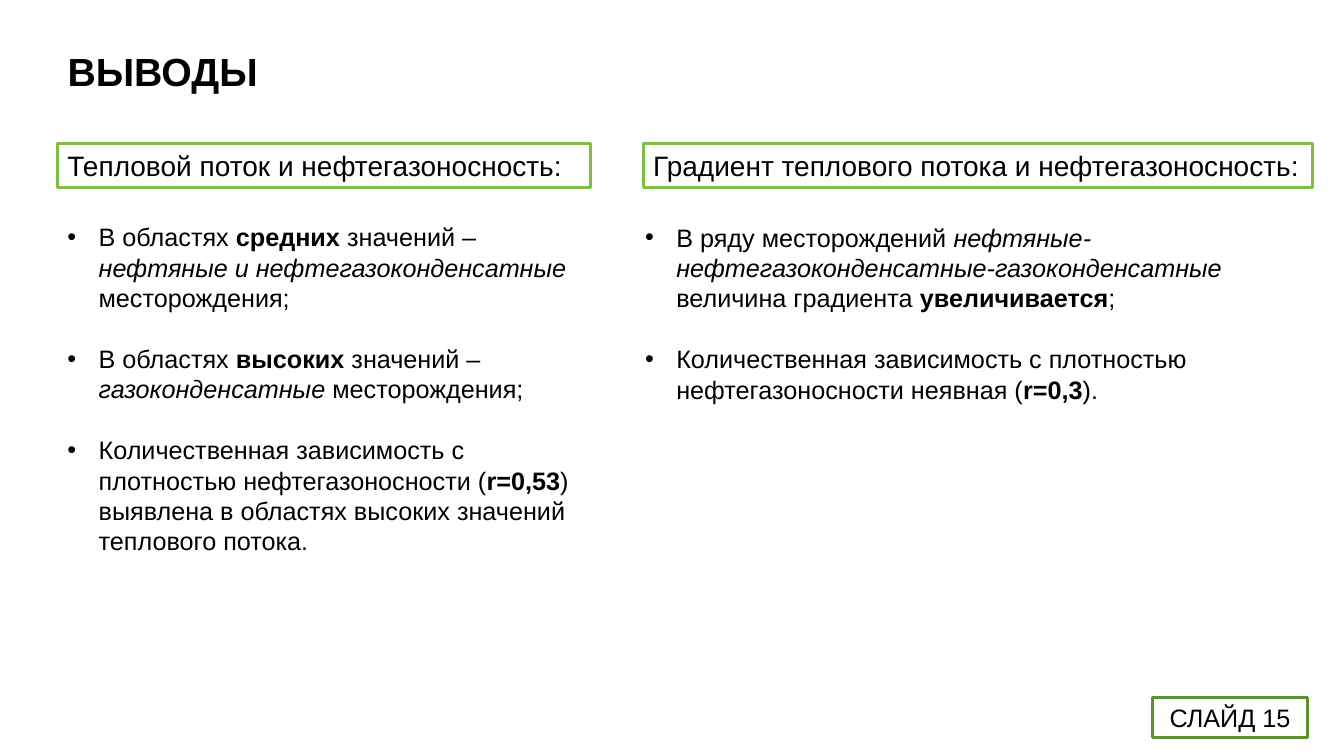
from pptx import Presentation
from pptx.dml.color import RGBColor
from pptx.enum.shapes import MSO_SHAPE
from pptx.enum.text import MSO_ANCHOR, PP_ALIGN
from pptx.oxml.ns import qn
from pptx.util import Inches, Pt
from lxml.etree import SubElement

TITLE = "ВЫВОДЫ"
SLIDE_LABEL = "СЛАЙД 15"
COLUMNS = [
    {
        "heading": "Тепловой поток и нефтегазоносность:",
        "heading_span": (0.57, 5.29),
        "list_span": (0.57, 5.29),
        "points": [
            [("В областях ", ""), ("средних", "b"), (" значений – ", ""),
             ("нефтяные и нефтегазоконденсатные ", "i"), ("месторождения;", "")],
            [("В областях ", ""), ("высоких", "b"), (" значений – ", ""),
             ("газоконденсатные", "i"), (" месторождения;", "")],
            [("Количественная зависимость с плотностью нефтегазоносности (", ""),
             ("r=0,53", "b"),
             (") выявлена в областях высоких значений теплового потока.", "")],
        ],
        "list_height": 3.43,
    },
    {
        "heading": "Градиент теплового потока и нефтегазоносность:",
        "heading_span": (6.38, 6.64),
        "list_span": (6.3, 6.67),
        "points": [
            [("В ряду месторождений ", ""),
             ("нефтяные-нефтегазоконденсатные-газоконденсатные", "i"),
             (" величина градиента ", ""), ("увеличивается", "b"), (";", "")],
            [("Количественная зависимость с плотностью нефтегазоносности неявная (", ""),
             ("r=0,3", "b"), (").", "")],
        ],
        "list_height": 1.92,
    },
]

BLACK = RGBColor(0x00, 0x00, 0x00)
WHITE = RGBColor(0xFF, 0xFF, 0xFF)
GREEN = RGBColor(0x80, 0xBF, 0x44)
DARK_GREEN = RGBColor(0x5F, 0x90, 0x31)
FONT = "Arial"
HEADING_TOP, HEADING_HEIGHT = 1.42, 0.44
LIST_TOP = 2.15
BULLET_INDENT = Inches(0.31)
LIST_PITCH = Pt(21.7)


def write(box, paragraphs, size=18, align=PP_ALIGN.LEFT, anchor=MSO_ANCHOR.TOP,
          bold=False, spacing=None, gap=None, bullet=None):
    frame = box.text_frame
    frame.word_wrap = True
    frame.vertical_anchor = anchor
    for index, spans in enumerate(paragraphs):
        para = frame.add_paragraph() if index else frame.paragraphs[0]
        if bullet:
            properties = para._p.get_or_add_pPr()
            properties.set("marL", str(BULLET_INDENT))
            properties.set("indent", str(-BULLET_INDENT))
            SubElement(properties, qn("a:buFont")).set("typeface", FONT)
            SubElement(properties, qn("a:buChar")).set("char", bullet)
        para.alignment = align
        if spacing:
            para.line_spacing = spacing
        if gap and index:
            para.space_before = gap
        for text, style in spans:
            span = para.add_run()
            span.text = text
            span.font.name = FONT
            span.font.size = Pt(size)
            span.font.color.rgb = BLACK
            span.font.bold = bold or style == "b"
            span.font.italic = style == "i"


def framed_label(page, text, left, top, width, height, line_color, **text_format):
    box = page.shapes.add_shape(MSO_SHAPE.RECTANGLE, Inches(left), Inches(top),
                                Inches(width), Inches(height))
    box.shadow.inherit = False
    box.fill.solid()
    box.fill.fore_color.rgb = WHITE
    box.line.color.rgb = line_color
    box.line.width = Pt(2)
    write(box, [[(text, "")]], **text_format)


def main():
    deck = Presentation()
    deck.slide_width, deck.slide_height = Inches(13.33), Inches(7.5)
    page = deck.slides.add_slide(deck.slide_layouts[5])

    title = page.shapes.title
    title.left, title.top = Inches(0.57), Inches(0.2)
    title.width, title.height = Inches(9.51), Inches(1.1)
    write(title, [[(TITLE, "")]], size=28, bold=True, spacing=0.8,
          anchor=MSO_ANCHOR.MIDDLE)

    for column in COLUMNS:
        left, width = column["heading_span"]
        framed_label(page, column["heading"], left, HEADING_TOP, width,
                     HEADING_HEIGHT, GREEN, size=20)
        left, width = column["list_span"]
        points_box = page.shapes.add_textbox(Inches(left), Inches(LIST_TOP), Inches(width),
                                             Inches(column["list_height"]))
        write(points_box, column["points"], spacing=LIST_PITCH, gap=LIST_PITCH, bullet="•")

    framed_label(page, SLIDE_LABEL, 11.43, 6.92, 1.54, 0.4, DARK_GREEN,
                 align=PP_ALIGN.CENTER, anchor=MSO_ANCHOR.MIDDLE)
    deck.save("out.pptx")


if __name__ == "__main__":
    main()
